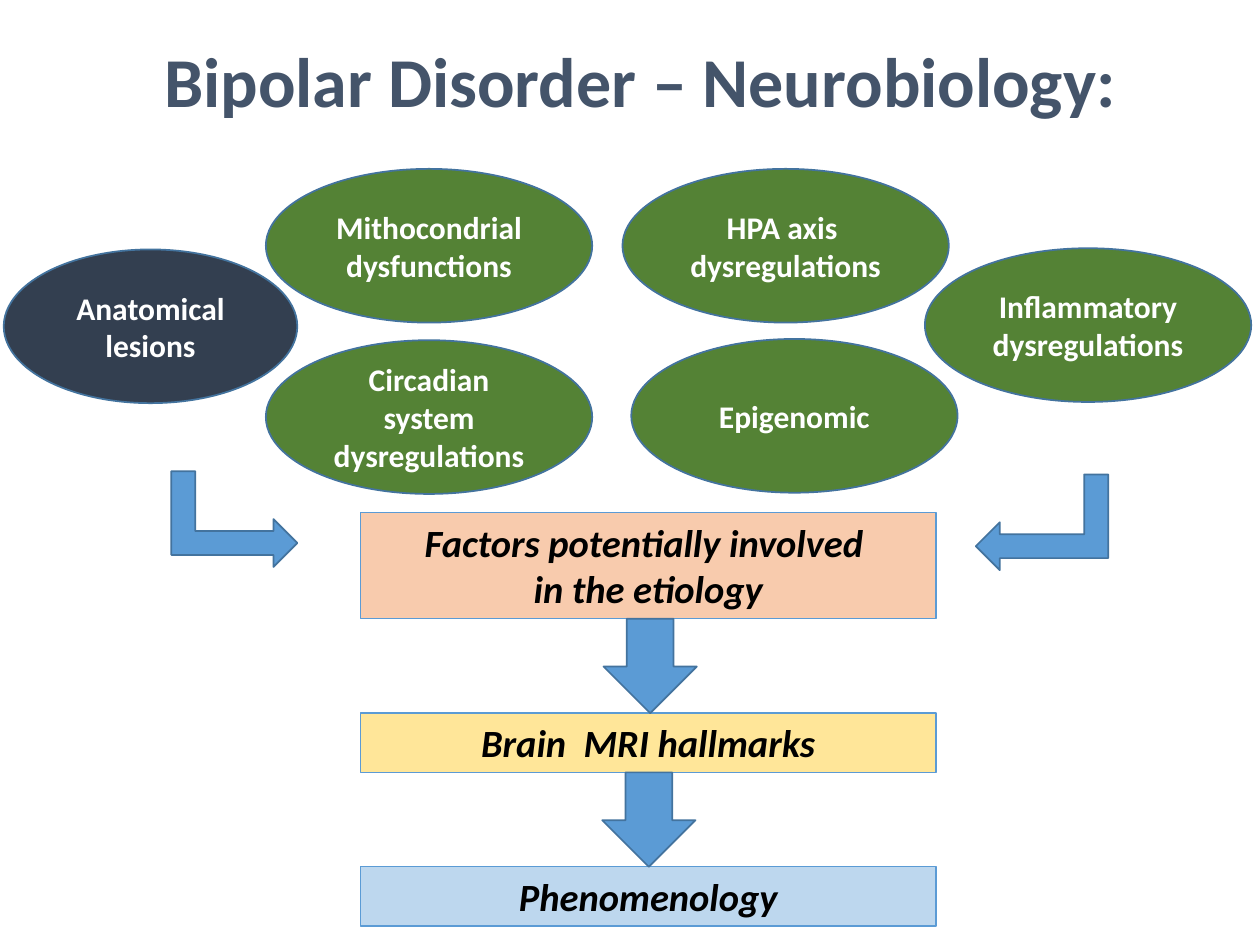
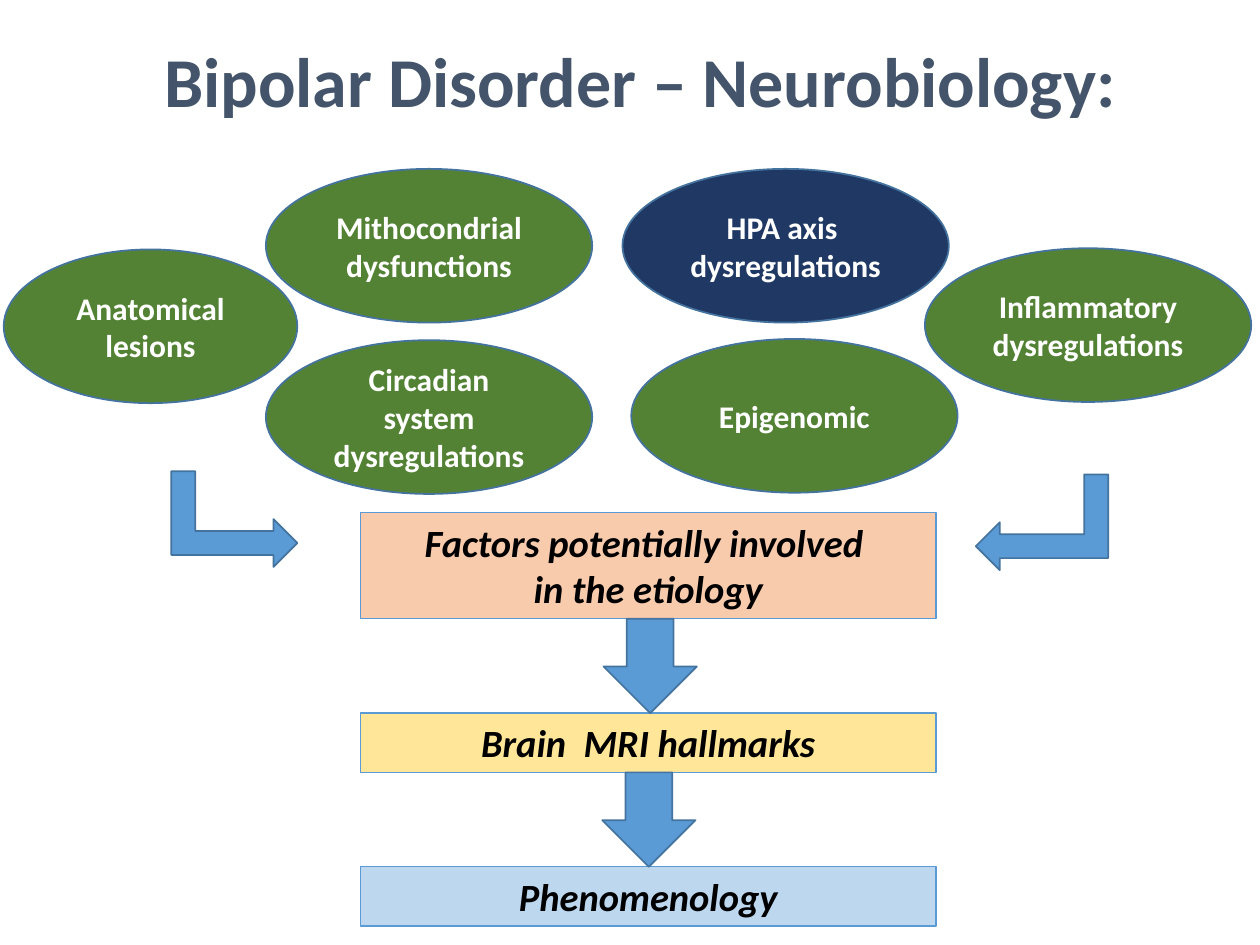
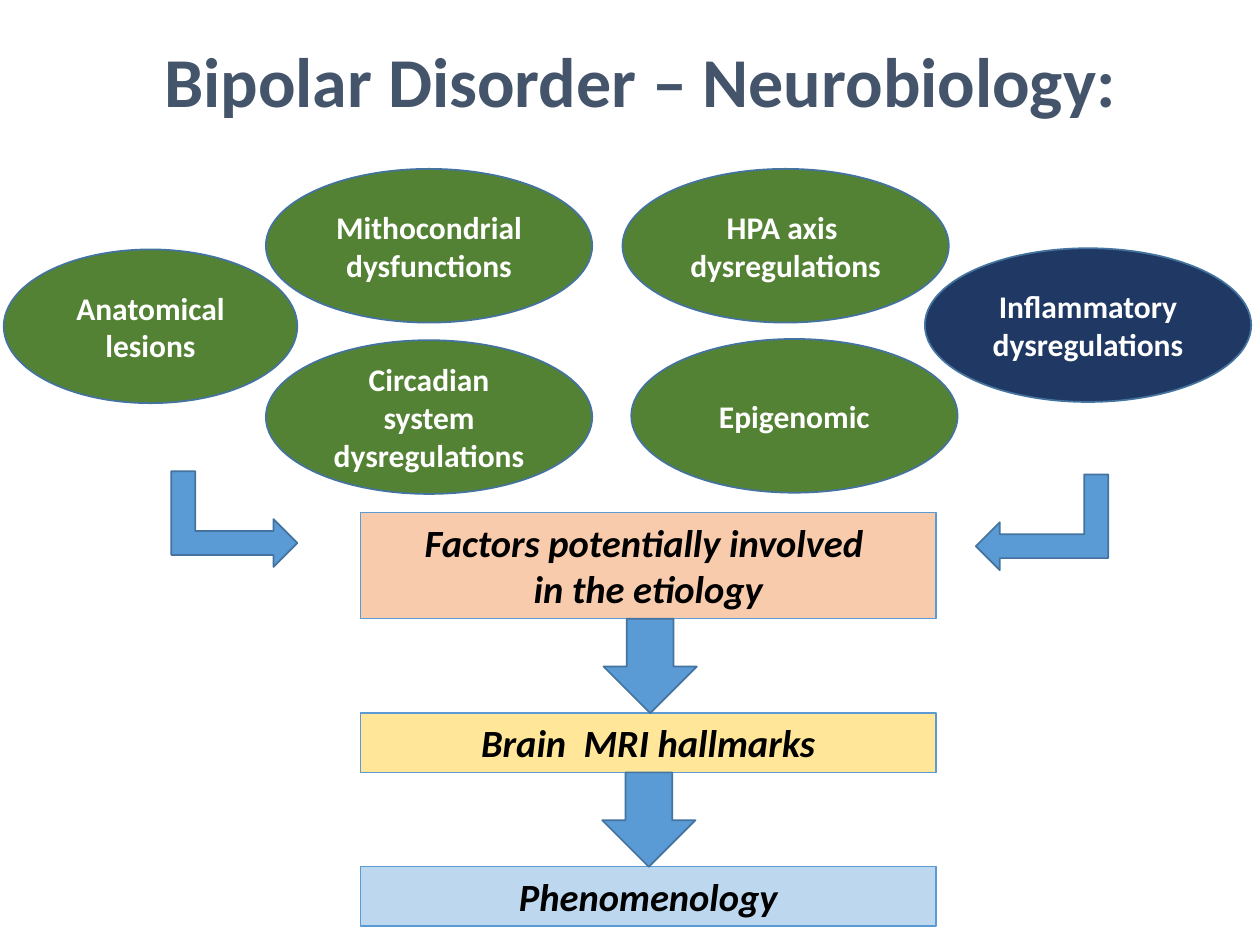
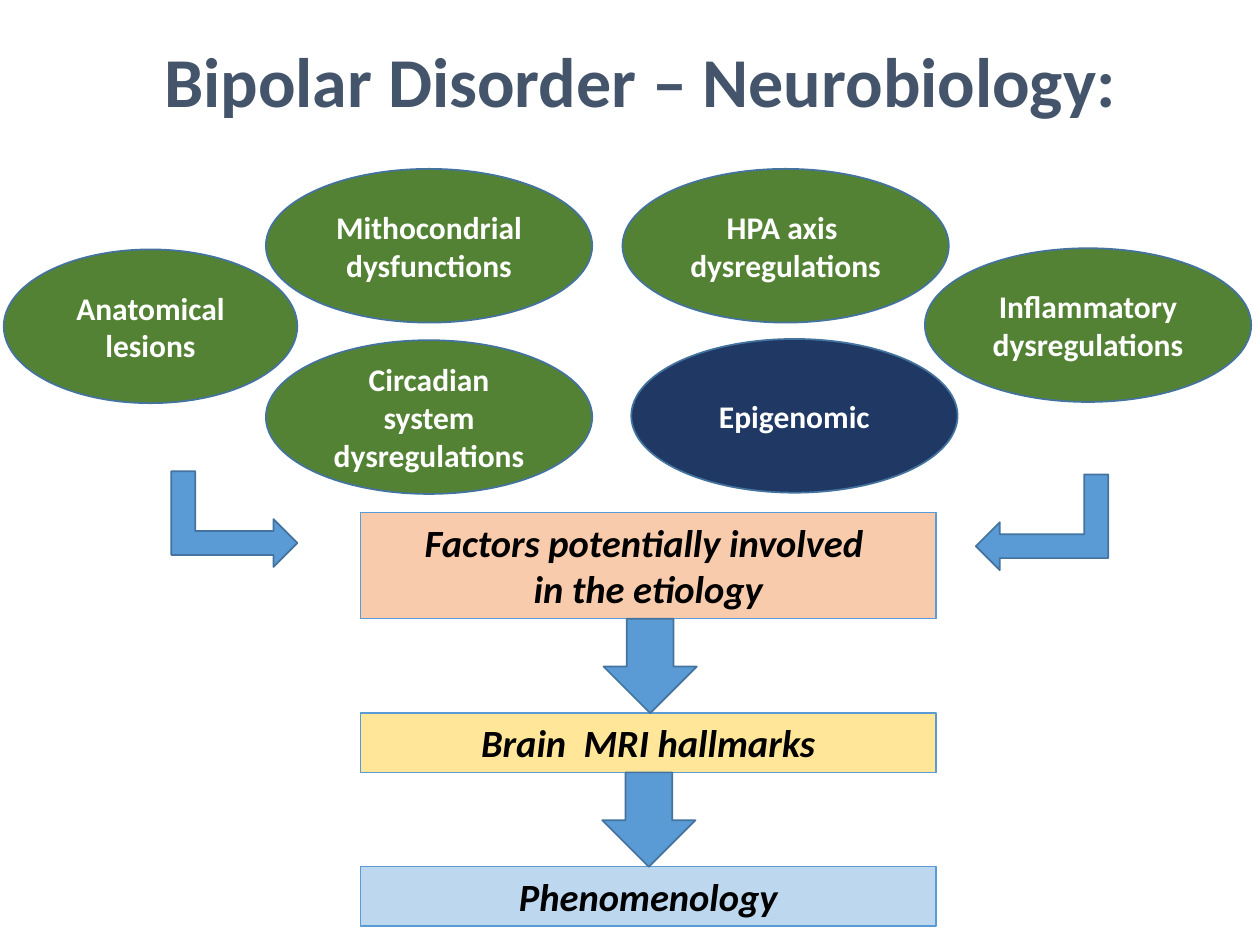
from pptx import Presentation
from pptx.dml.color import RGBColor
from pptx.enum.shapes import MSO_SHAPE
from pptx.enum.text import MSO_ANCHOR, MSO_AUTO_SIZE, PP_ALIGN
from pptx.util import Inches, Pt

RECTANGLE = MSO_SHAPE.RECTANGLE
ELLIPSE = MSO_SHAPE.OVAL
DOWN_ARROW = MSO_SHAPE.DOWN_ARROW
BENT_ARROW = MSO_SHAPE.BENT_UP_ARROW
CENTER = PP_ALIGN.CENTER
TOP, MIDDLE = MSO_ANCHOR.TOP, MSO_ANCHOR.MIDDLE
GROW = MSO_AUTO_SIZE.SHAPE_TO_FIT_TEXT

FONT = "Calibri"
WHITE = RGBColor(0xFF, 0xFF, 0xFF)
BLACK = RGBColor(0, 0, 0)
SLATE = RGBColor(0x44, 0x54, 0x6A)
DARK_SLATE = RGBColor(0x33, 0x3F, 0x50)
NAVY = RGBColor(0x20, 0x38, 0x64)
GREEN = RGBColor(0x54, 0x82, 0x35)
BLUE = RGBColor(0x5B, 0x9B, 0xD5)
OUTLINE = RGBColor(0x43, 0x73, 0x9E)
PEACH = RGBColor(0xF8, 0xCB, 0xAD)
YELLOW = RGBColor(0xFF, 0xE6, 0x99)
PALE_BLUE = RGBColor(0xBD, 0xD7, 0xEE)

TITLE = "Bipolar Disorder – Neurobiology:"
STAGE_LEFT, STAGE_WIDTH = 2.86, 4.57
FACTOR_WIDTH, FACTOR_HEIGHT = 2.59, 1.22

# text, top, height, fill
STAGES = [
    ("Factors potentially involved \nin the etiology", 4.07, 0.84, PEACH),
    ("Brain  MRI hallmarks", 5.66, 0.47, YELLOW),
    ("Phenomenology", 6.88, 0.47, PALE_BLUE),
]

# text, left, top, width
FACTORS = [
    ("Anatomical lesions", 0.03, 1.98, 2.33),
    ("Mithocondrial dysfunctions", 2.11, 1.34, FACTOR_WIDTH),
    ("HPA axis  dysregulations", 4.94, 1.34, FACTOR_WIDTH),
    ("Inflammatory\ndysregulations", 7.34, 1.97, FACTOR_WIDTH),
    ("Circadian system\ndysregulations", 2.11, 2.7, FACTOR_WIDTH),
    ("Epigenomic", 5.01, 2.69, FACTOR_WIDTH),
]

# index of the highlighted factor on each slide, and its fill
HIGHLIGHTS = [(0, DARK_SLATE), (2, NAVY), (3, NAVY), (5, NAVY)]


def add_figure(slide, kind, left, top, width, height, fill, line=OUTLINE, line_width=1):
    shape = slide.shapes.add_shape(
        kind, Inches(left), Inches(top), Inches(width), Inches(height))
    shape.shadow.inherit = False
    shape.fill.solid()
    shape.fill.fore_color.rgb = fill
    if line is None:
        shape.line.fill.background()
    else:
        shape.line.color.rgb = line
        shape.line.width = Pt(line_width)
    return shape


def write(shape, text, size, color, anchor=TOP, italic=False):
    """Put centred bold text into the shape, one paragraph per line."""
    text_frame = shape.text_frame
    text_frame.text = text
    text_frame.word_wrap = True
    text_frame.vertical_anchor = anchor
    if anchor == TOP:
        text_frame.auto_size = GROW
    for paragraph in text_frame.paragraphs:
        paragraph.alignment = CENTER
        for run in paragraph.runs:
            run.font.name = FONT
            run.font.size = Pt(size)
            run.font.bold = True
            run.font.italic = italic
            run.font.color.rgb = color


def add_title(slide):
    title = add_figure(slide, RECTANGLE, 1.02, 0.25, 8.12, 0.77, WHITE, line=None)
    write(title, TITLE, 40, SLATE)


def add_stage(slide, text, top, height, fill):
    stage = add_figure(slide, RECTANGLE, STAGE_LEFT, top, STAGE_WIDTH, height,
                       fill, BLUE, 0.75)
    write(stage, text, 22, BLACK, italic=True)


def add_factor(slide, text, left, top, width, fill):
    factor = add_figure(slide, ELLIPSE, left, top, width, FACTOR_HEIGHT, fill)
    write(factor, text, 18, WHITE, MIDDLE)


def add_bent_arrow(slide, left, length, mirrored=False):
    """Add an arrow going down, then right, or left when mirrored."""
    arrow = add_figure(slide, BENT_ARROW, left, 3.62, 0.76, length, BLUE)
    arrow.rotation = 90
    if mirrored:
        arrow.element.spPr.xfrm.set("flipV", "1")


def add_neurobiology_slide(presentation, highlighted, highlight_fill):
    slide = presentation.slides.add_slide(presentation.slide_layouts[6])
    add_title(slide)
    for stage in STAGES:
        add_stage(slide, *stage)
    for left, top in ((4.79, 4.91), (4.78, 6.13)):
        add_figure(slide, DOWN_ARROW, left, top, 0.74, 0.75, BLUE)
    for index, factor in enumerate(FACTORS):
        fill = highlight_fill if index == highlighted else GREEN
        add_factor(slide, *factor, fill)
    add_bent_arrow(slide, 1.48, 1)
    add_bent_arrow(slide, 7.89, 1.05, mirrored=True)


def main():
    presentation = Presentation()
    presentation.slide_width = Inches(10)
    presentation.slide_height = Inches(7.5)
    for highlighted, fill in HIGHLIGHTS:
        add_neurobiology_slide(presentation, highlighted, fill)
    presentation.save("out.pptx")


if __name__ == "__main__":
    main()
